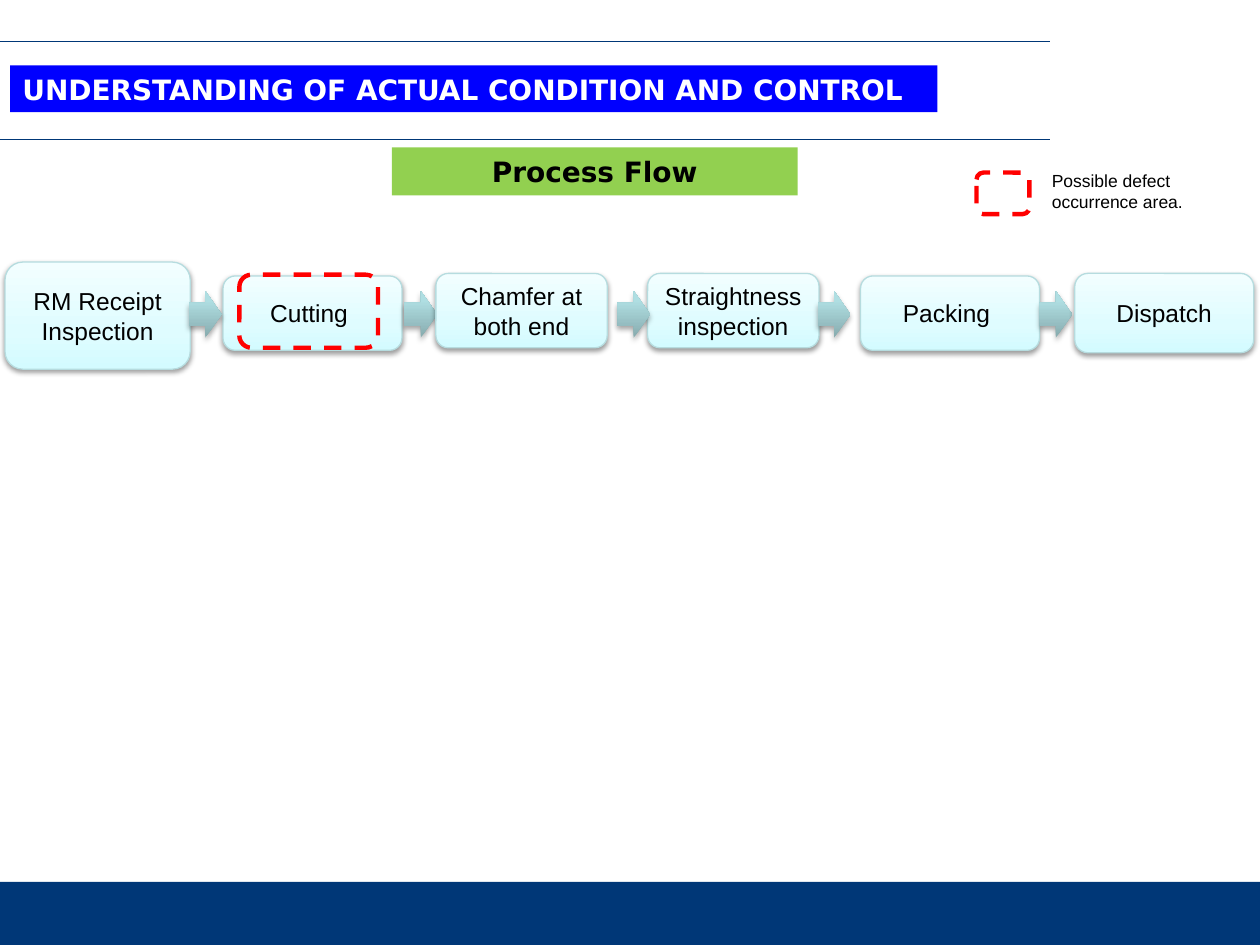
from pptx import Presentation
from pptx import util as u
from pptx.dml.color import RGBColor
from pptx.enum import dml, shapes, text
from pptx.oxml import parse_xml
from pptx.oxml.ns import nsdecls

COLORS = {
    "navy": "003777", "blue": "0000FF", "green": "92D050", "red": "FF0000",
    "white": "FFFFFF", "black": "000000", "edge": "B6DCDF",
}
# Gradient stops: percent and colour, from bottom to top
GRADS = {
    "step": [(0, "D3FBFF"), (35, "DFFCFF"), (100, "F2FEFF")],
    "arrow": [(0, "87ABAE"), (80, "AFDEE2"), (100, "AFE0E4")],
}
FORMATS = {
    "head": {"size": u.Pt(16), "name": "DejaVu Sans", "bold": True},
    "step": {"size": u.Pt(14), "name": "Arial"},
    "note": {"size": u.Pt(10), "name": "Arial"},
}
KIND = shapes.MSO_SHAPE
ALIGN = text.PP_ALIGN


class Deck:
    def __init__(self, wide, high):
        self.prs = Presentation()
        self.prs.slide_width = u.Inches(wide)
        self.prs.slide_height = u.Inches(high)
        self.slide = self.prs.slides.add_slide(self.prs.slide_layouts[6])

    def color(self, name):
        return RGBColor.from_string(COLORS[name])

    def label(self, shape, words, style, ink="black", align=ALIGN.CENTER, pad=None):
        frame = shape.text_frame
        frame.word_wrap = True
        frame.vertical_anchor = text.MSO_ANCHOR.MIDDLE
        if pad is not None:
            for side in ("left", "top", "right", "bottom"):
                setattr(frame, f"margin_{side}", u.Inches(pad))
        para = frame.paragraphs[0]
        para.alignment = align
        run = para.add_run()
        run.text = words
        for key, value in FORMATS[style].items():
            setattr(run.font, key, value)
        run.font.color.rgb = self.color(ink)

    def shape(self, kind, box, fill=None, line=None, width=0.75):
        item = self.slide.shapes.add_shape(kind, *map(u.Inches, box))
        item.shadow.inherit = False
        if fill:
            item.fill.solid()
            item.fill.fore_color.rgb = self.color(fill)
        else:
            item.fill.background()
        if line:
            item.line.color.rgb = self.color(line)
            item.line.width = u.Pt(width)
        else:
            item.line.fill.background()
        return item

    def glossy(self, kind, box, grad, alpha, drop, line=None):
        item = self.shape(kind, box, line=line)
        props = item.element.spPr
        stops = "".join(
            f'<a:gs pos="{pos * 1000}"><a:srgbClr val="{tint}"/></a:gs>'
            for pos, tint in GRADS[grad])
        blank = props.find("{*}noFill")
        props.replace(blank, parse_xml(
            f'<a:gradFill {nsdecls("a")} rotWithShape="1"><a:gsLst>{stops}</a:gsLst>'
            '<a:lin ang="16200000" scaled="0"/></a:gradFill>'))
        props.find("{*}effectLst").append(parse_xml(
            f'<a:outerShdw {nsdecls("a")} blurRad="{u.Pt(3.1)}" dist="{u.Pt(drop)}" '
            'dir="5400000" rotWithShape="0"><a:srgbClr val="000000">'
            f'<a:alpha val="{alpha * 1000}"/></a:srgbClr></a:outerShdw>'))
        return item

    def step(self, words, *box):
        item = self.glossy(KIND.ROUNDED_RECTANGLE, box, "step", 38, 1.6, "edge")
        self.label(item, words, "step", pad=0.02)

    def arrow(self, left):
        self.glossy(KIND.RIGHT_ARROW, (left, 2.31, 0.26, 0.37), "arrow", 35, 1.8)

    def defect(self, *box):
        item = self.shape(KIND.ROUNDED_RECTANGLE, box, line="red", width=2.5)
        item.line.dash_style = dml.MSO_LINE.DASH

    def banner(self, words, box, fill, ink, align):
        self.label(self.shape(KIND.RECTANGLE, box, fill), words, "head", ink, align)

    def rule(self, top, right):
        line = self.slide.shapes.add_connector(
            shapes.MSO_CONNECTOR.STRAIGHT, 0, u.Inches(top), u.Inches(right), u.Inches(top))
        line.line.color.rgb = self.color("navy")
        line.line.width = u.Pt(0.75)
        line.element.spPr.append(parse_xml(f'<a:effectLst {nsdecls("a")}/>'))

    def note(self, words, *box):
        item = self.slide.shapes.add_textbox(*map(u.Inches, box))
        self.label(item, words, "note", align=ALIGN.LEFT)


def main():
    deck = Deck(10, 7.5)

    # Footer band and header rules
    deck.shape(KIND.RECTANGLE, (0, 7, 10, 0.5), "navy")
    for top in (0.33, 1.11):
        deck.rule(top, 8.33)

    # Titles and legend
    deck.defect(7.75, 1.37, 0.42, 0.33)
    deck.banner("UNDERSTANDING OF ACTUAL CONDITION AND CONTROL",
                (0.08, 0.52, 7.36, 0.37), "blue", "white", ALIGN.LEFT)
    deck.banner("Process Flow", (3.11, 1.17, 3.22, 0.38), "green", "black", ALIGN.CENTER)
    deck.note("Possible defect occurrence area.", 8.25, 1.3, 1.33, 0.44)

    # Process steps; the last two overlap the arrows before them
    deck.step("RM Receipt Inspection", 0.04, 2.08, 1.47, 0.85)
    deck.step("Cutting ", 1.77, 2.19, 1.42, 0.59)
    deck.step("Straightness inspection", 5.14, 2.17, 1.36, 0.59)
    deck.step("Packing ", 6.83, 2.19, 1.42, 0.59)
    for left in (1.5, 3.21, 6.49, 8.25):
        deck.arrow(left)
    deck.step("Dispatch", 8.53, 2.17, 1.42, 0.63)
    deck.step("Chamfer at both end", 3.46, 2.17, 1.36, 0.59)
    deck.arrow(4.9)

    # Defect mark on the cutting step
    deck.defect(1.9, 2.18, 1.1, 0.58)

    deck.prs.save("out.pptx")


if __name__ == "__main__":
    main()
